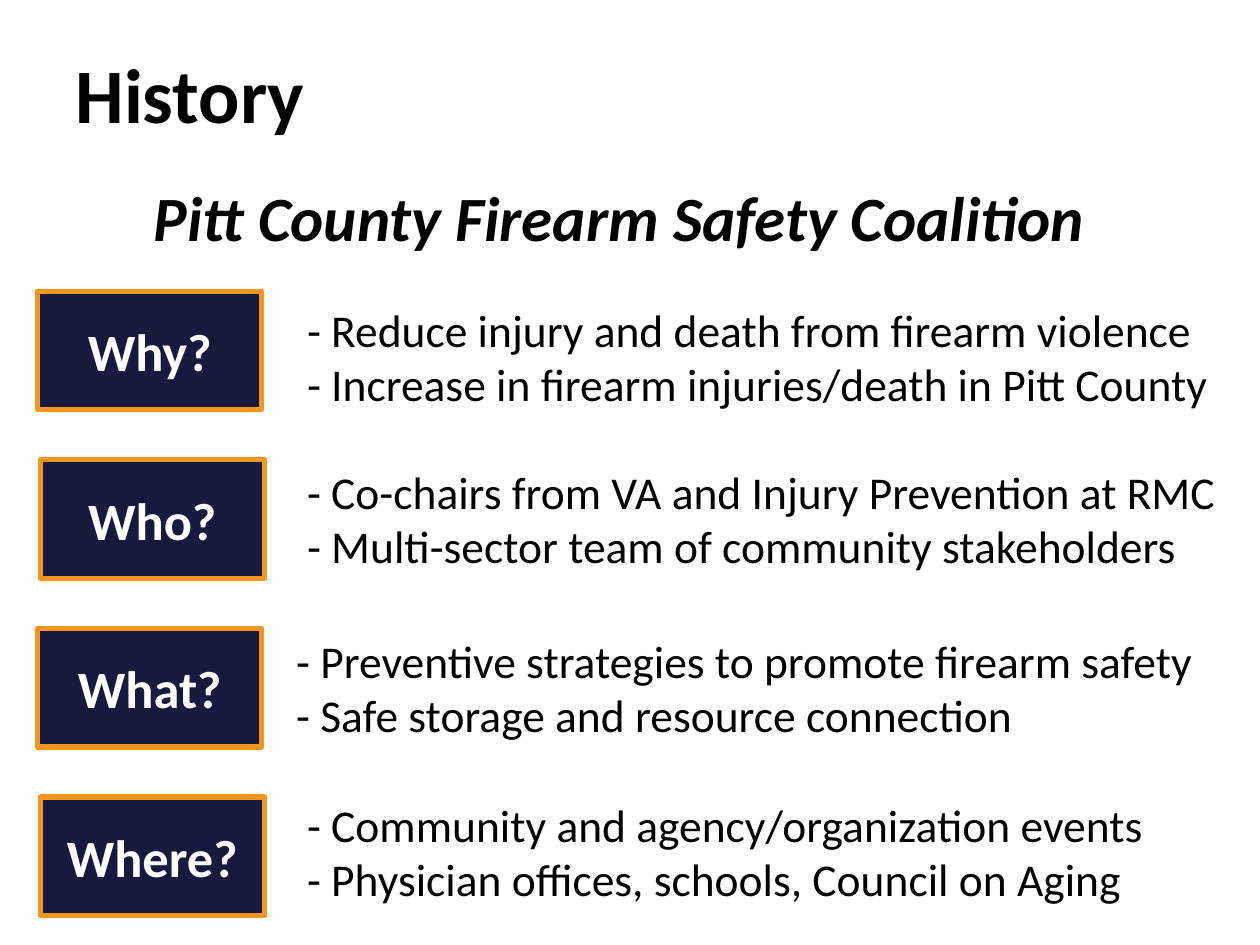
from dataclasses import dataclass

from pptx import Presentation
from pptx.dml.color import RGBColor
from pptx.enum.shapes import MSO_SHAPE as Shape
from pptx.enum.text import MSO_ANCHOR as Anchor, MSO_AUTO_SIZE as AutoSize, PP_ALIGN as Align
from pptx.util import Cm, Pt


@dataclass(frozen=True)
class Theme:
    font: str = "Calibri"
    black: RGBColor = RGBColor(0x00, 0x00, 0x00)
    white: RGBColor = RGBColor(0xFF, 0xFF, 0xFF)
    navy: RGBColor = RGBColor(0x18, 0x1A, 0x3D)
    orange: RGBColor = RGBColor(0xF4, 0x95, 0x1E)
    title_size: Pt = Pt(44)
    subtitle_size: Pt = Pt(36)
    label_size: Pt = Pt(30)
    body_size: Pt = Pt(26)
    border: Pt = Pt(3)


theme = Theme()


def write(shape, lines, size, color, align=Align.LEFT, anchor=Anchor.MIDDLE,
          bold=False, italic=False):
    """Fill the shape with one paragraph per line."""
    frame = shape.text_frame
    frame.word_wrap = True
    frame.auto_size = AutoSize.NONE
    frame.vertical_anchor = anchor
    for index, line in enumerate(lines):
        paragraph = frame.add_paragraph() if index else frame.paragraphs[0]
        paragraph.alignment = align
        run = paragraph.add_run()
        run.text = line
        run.font.name = theme.font
        run.font.size = size
        run.font.bold = bold
        run.font.italic = italic
        run.font.color.rgb = color


presentation = Presentation()
presentation.slide_width = Cm(25.4)
presentation.slide_height = Cm(19.05)
slide = presentation.slides.add_slide(presentation.slide_layouts[5])

# Title
title = slide.shapes.title
title.left, title.top, title.width, title.height = Cm(1.27), Cm(0.76), Cm(17.58), Cm(2.2)
write(title, ["History"], theme.title_size, theme.black, bold=True)

# Coalition name
subtitle = slide.shapes.add_textbox(Cm(0), Cm(3.48), Cm(24.97), Cm(1.9))
write(subtitle, ["Pitt County Firearm Safety Coalition"], theme.subtitle_size,
      theme.black, Align.CENTER, Anchor.TOP, bold=True, italic=True)

# Questions and answers: label, label left, answer left, answer top, answer lines
rows = [
    ("Why?", 0.76, 5.94, 5.87, ["- Reduce injury and death from firearm violence",
                                "- Increase in firearm injuries/death in Pitt County"]),
    ("Who?", 0.81, 5.94, 9.14, ["- Co-chairs from VA and Injury Prevention at RMC",
                                "- Multi-sector team of community stakeholders"]),
    ("What?", 0.76, 5.72, 12.55, ["- Preventive strategies to promote firearm safety",
                                  "- Safe storage and resource connection"]),
    ("Where?", 0.81, 5.94, 15.85, ["- Community and agency/organization events",
                                   "- Physician offices, schools, Council on Aging"]),
]
first_label_top, row_pitch = 5.87, 3.4

for index, (question, label_left, answer_left, answer_top, answers) in enumerate(rows):
    label = slide.shapes.add_shape(Shape.RECTANGLE, Cm(label_left),
                                   Cm(first_label_top + index * row_pitch),
                                   Cm(4.52), Cm(2.39))
    label.shadow.inherit = False
    label.fill.solid()
    label.fill.fore_color.rgb = theme.navy
    label.line.color.rgb = theme.orange
    label.line.width = theme.border
    write(label, [question], theme.label_size, theme.white, Align.CENTER, bold=True)

    answer = slide.shapes.add_textbox(Cm(answer_left), Cm(answer_top), Cm(19.05), Cm(2.62))
    write(answer, answers, theme.body_size, theme.black)

presentation.save("out.pptx")
